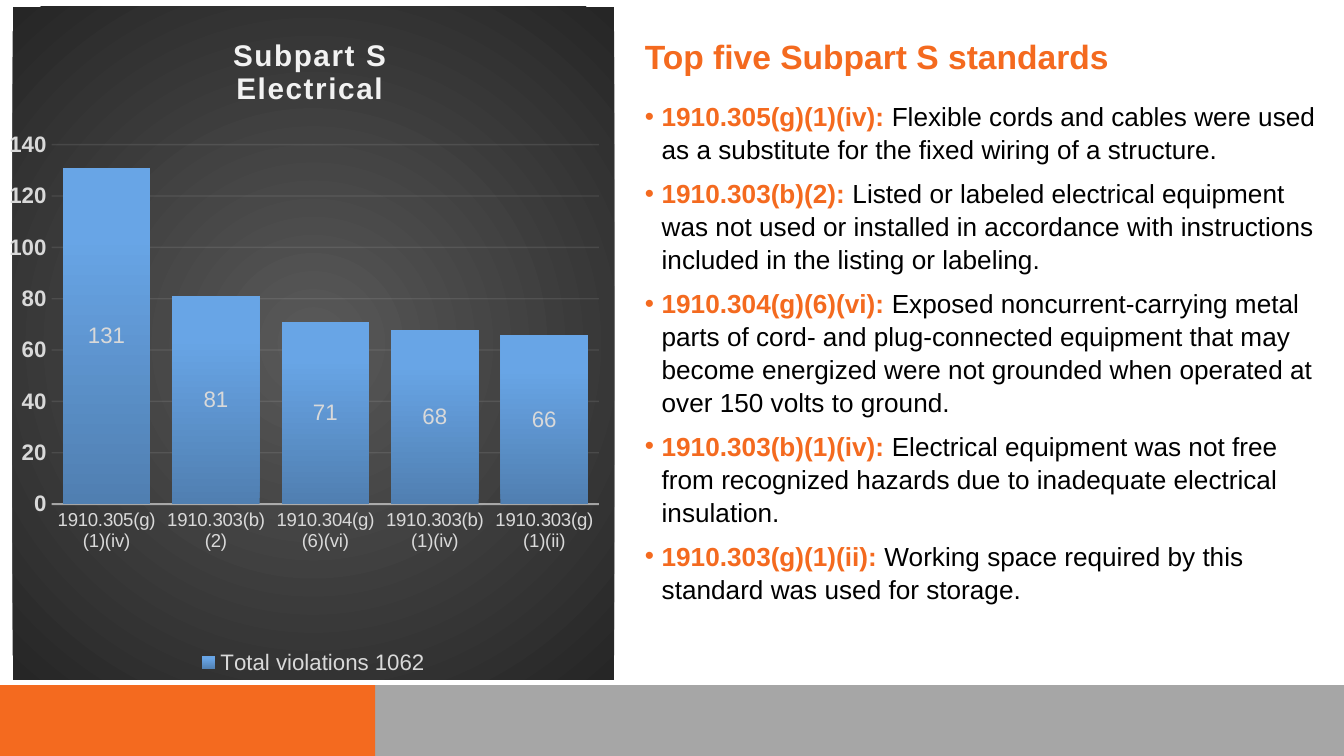
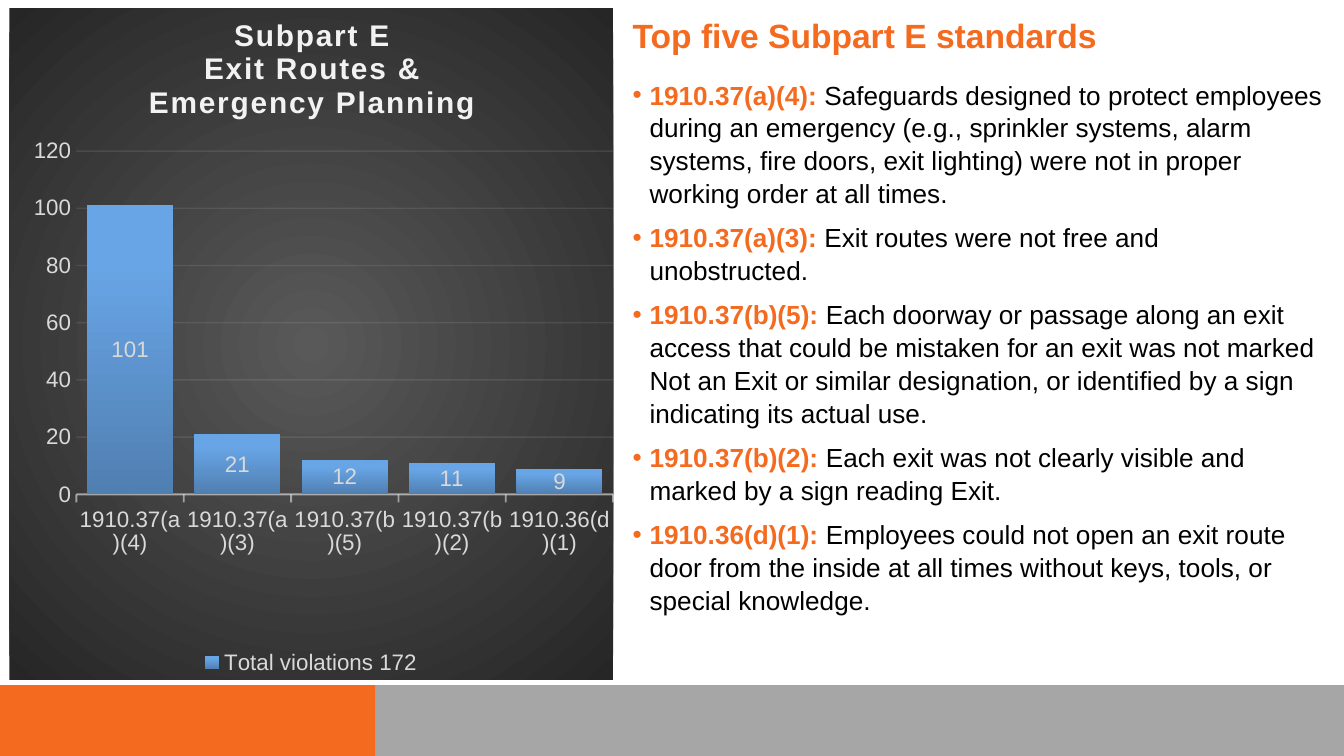
from lxml import etree
from pptx import Presentation
from pptx.chart.data import CategoryChartData
from pptx.dml.color import RGBColor
from pptx.enum.chart import XL_CHART_TYPE, XL_LEGEND_POSITION, XL_TICK_MARK
from pptx.enum.shapes import MSO_SHAPE
from pptx.enum.text import MSO_AUTO_SIZE, PP_ALIGN
from pptx.oxml import parse_xml
from pptx.oxml.ns import nsdecls, qn
from pptx.util import Pt

ORANGE = RGBColor(0xF4, 0x6A, 0x1F)
GREY = RGBColor(0xA6, 0xA6, 0xA6)
BLACK = RGBColor(0, 0, 0)
PALE = RGBColor(0xF2, 0xF2, 0xF2)
LABEL = RGBColor(0xD9, 0xD9, 0xD9)
PANEL_IN = RGBColor(0x59, 0x59, 0x59)
PANEL_OUT = RGBColor(0x26, 0x26, 0x26)
BAR_LOW = RGBColor(0x50, 0x7F, 0xB1)
BAR_MID = RGBColor(0x68, 0xA5, 0xE6)
BAR_TOP = RGBColor(0x66, 0xA6, 0xE9)

W, H = 720, 405
BAND_TOP, BAND_SPLIT = 367, 201

# Text formats
BASE = dict(name="Arial", bold=False)
HEADING = dict(BASE, size=Pt(18), bold=True, color=ORANGE)
CODE = dict(BASE, size=Pt(14), bold=True, color=ORANGE)
BODY = dict(BASE, size=Pt(14), color=BLACK)
CHART_TITLE = dict(BASE, size=Pt(16), bold=True, color=PALE)
CHART_TEXT = dict(BASE, size=Pt(12), color=LABEL)

# Gradient directions
RADIAL = ('<a:path path="circle"><a:fillToRect l="50000" t="50000" '
          'r="50000" b="50000"/></a:path>')
UPWARD = '<a:lin ang="16200000" scaled="0"/>'


def set_font(font, fmt):
    for key, value in fmt.items():
        if key == "color":
            font.color.rgb = value
        else:
            setattr(font, key, value)


def add_run(p, text, fmt, spacing=None):
    r = p.add_run()
    r.text = text
    set_font(r.font, fmt)
    if spacing:
        r._r.get_or_add_rPr().set("spc", str(spacing))


def gradient(stops, direction):
    gs = "".join(f'<a:gs pos="{pos * 1000}"><a:srgbClr val="{color}"/></a:gs>'
                 for pos, color in stops)
    return parse_xml(f'<c:spPr {nsdecls("c", "a")}><a:gradFill rotWithShape="1">'
                     f'<a:gsLst>{gs}</a:gsLst>{direction}</a:gradFill>'
                     '<a:ln><a:noFill/></a:ln></c:spPr>')


def set_layout(parent, **values):
    """Give a chart part a manual layout, as fractions of the chart."""
    old = parent.find(qn("c:layout"))
    if old is not None:
        parent.remove(old)
    layout = etree.Element(qn("c:layout"))
    manual = etree.SubElement(layout, qn("c:manualLayout"))
    for key, value in values.items():
        etree.SubElement(manual, qn(f"c:{key}")).set("val", str(value))
    tx = parent.find(qn("c:tx"))
    parent.insert(0 if tx is None else 1, layout)


def set_line(line, width, alpha, colors):
    line.color.rgb = PALE
    line.width = Pt(width)
    for color in colors():
        etree.SubElement(color, qn("a:alpha")).set("val", str(alpha * 1000))


def footer_bands(s):
    for x, w, color in ((BAND_SPLIT - 1, W - BAND_SPLIT + 1, GREY),
                        (0, BAND_SPLIT, ORANGE)):
        sp = s.shapes.add_shape(MSO_SHAPE.RECTANGLE, Pt(x), Pt(BAND_TOP),
                                Pt(w), Pt(H - BAND_TOP))
        sp.shadow.inherit = False
        sp.fill.solid()
        sp.fill.fore_color.rgb = color
        sp.line.fill.background()


def violations_chart(s, box, spec):
    data = CategoryChartData()
    data.categories = [code for code, _ in spec["bars"]]
    data.add_series(spec["total"], [value for _, value in spec["bars"]])
    chart = s.shapes.add_chart(XL_CHART_TYPE.COLUMN_STACKED,
                               *map(Pt, box), data).chart
    root = chart.element
    set_font(chart.font, dict(BASE, size=Pt(10), color=BLACK))

    # Dark panel and plot area
    root.find(qn("c:chart")).addnext(
        gradient([(0, PANEL_IN), (100, PANEL_OUT)], RADIAL))
    x, y, w, h = spec["plot"]
    set_layout(root.find(".//" + qn("c:plotArea")), layoutTarget="inner",
               xMode="edge", yMode="edge", x=x, y=y, w=w, h=h)

    # Title inside the chart
    chart.has_title = "chart_title" in spec
    if chart.has_title:
        tf = chart.chart_title.text_frame
        for i, line in enumerate(spec["chart_title"]):
            p = tf.add_paragraph() if i else tf.paragraphs[0]
            add_run(p, line, CHART_TITLE, 100)
        set_layout(root.find(".//" + qn("c:title")), xMode="edge",
                   yMode="edge", x=0.36, y=0.04)

    # Bars and their values
    plot = chart.plots[0]
    for key, value in dict(gap_width=25, overlap=100, vary_by_categories=False,
                           has_data_labels=True).items():
        setattr(plot, key, value)
    plot.data_labels.show_value = True
    set_font(plot.data_labels.font, CHART_TEXT)
    root.find(".//" + qn("c:ser")).find(qn("c:tx")).addnext(
        gradient([(0, BAR_LOW), (80, BAR_MID), (100, BAR_TOP)], UPWARD))

    # Axes
    cat, val = chart.category_axis, chart.value_axis
    for axis, fmt in ((cat, spec["cat_font"]), (val, spec["val_font"])):
        axis.minor_tick_mark = XL_TICK_MARK.NONE
        set_font(axis.tick_labels.font, dict(CHART_TEXT, **fmt))
    cat.major_tick_mark = spec["cat_tick"]
    for key, value in dict(major_tick_mark=XL_TICK_MARK.NONE, minimum_scale=0,
                           maximum_scale=spec["top"], major_unit=20,
                           has_major_gridlines=True).items():
        setattr(val, key, value)
    val.format.line.fill.background()
    for line, width, alpha, part in (
            (cat.format.line, 1, 54, "c:catAx/c:spPr"),
            (val.major_gridlines.format.line, 0.75, 10, "c:majorGridlines")):
        set_line(line, width, alpha,
                 lambda: root.xpath(f".//{part}//a:srgbClr"))

    # Legend
    chart.has_legend = True
    chart.legend.position = XL_LEGEND_POSITION.BOTTOM
    chart.legend.include_in_layout = False
    set_font(chart.legend.font, CHART_TEXT)


def text_box(s, box):
    tf = s.shapes.add_textbox(*map(Pt, box)).text_frame
    tf.word_wrap = True
    tf.auto_size = MSO_AUTO_SIZE.SHAPE_TO_FIT_TEXT
    return tf


def panel_title(s, box, lines):
    tf = text_box(s, box)
    for i, line in enumerate(lines):
        p = tf.add_paragraph() if i else tf.paragraphs[0]
        p.alignment = PP_ALIGN.CENTER
        p.line_spacing = Pt(18)
        add_run(p, line, CHART_TITLE, 100)


def standards_list(s, box, heading, items):
    tf = text_box(s, box)
    p = tf.paragraphs[0]
    p.space_after = Pt(12)
    add_run(p, heading, HEADING)
    for code, text in items:
        p = tf.add_paragraph()
        pPr = p._p.get_or_add_pPr()
        pPr.set("marL", str(Pt(9)))
        pPr.set("indent", str(-Pt(9)))
        etree.SubElement(pPr, qn("a:buFont")).set("typeface", "Arial")
        etree.SubElement(pPr, qn("a:buChar")).set("char", "•")
        p.line_spacing = 1.05
        p.space_after = Pt(6)
        add_run(p, f"{code}: ", CODE)
        add_run(p, text, BODY)


ELECTRICAL = dict(
    chart_box=(5, 3.6, 324, 360.7),
    chart_title=["Subpart S", "Electrical"],
    total="Total violations 1062",
    bars=[("1910.305(g)(1)(iv)", 131), ("1910.303(b)(2)", 81),
          ("1910.304(g)(6)(vi)", 71), ("1910.303(b)(1)(iv)", 68),
          ("1910.303(g)(1)(ii)", 66)],
    plot=(0.065, 0.205, 0.91, 0.534), top=140,
    cat_font=dict(size=Pt(10)), val_font=dict(bold=True),
    cat_tick=XL_TICK_MARK.NONE,
    list_box=(338.4, 15.8, 376.6, 326),
    heading="Top five Subpart S standards",
    texts=[
        "Flexible cords and cables were used as a substitute for the fixed "
        "wiring of a structure.",
        "Listed or labeled electrical equipment was not used or installed in "
        "accordance with instructions included in the listing or labeling.",
        "Exposed noncurrent-carrying metal parts of cord- and plug-connected "
        "equipment that may become energized were not grounded when operated "
        "at over 150 volts to ground.",
        "Electrical equipment was not free from recognized hazards due to "
        "inadequate electrical insulation.",
        "Working space required by this standard was used for storage."])

EXIT_ROUTES = dict(
    chart_box=(5, 4.3, 324, 360),
    total="Total violations 172",
    bars=[("1910.37(a)(4)", 101), ("1910.37(a)(3)", 21), ("1910.37(b)(5)", 12),
          ("1910.37(b)(2)", 11), ("1910.36(d)(1)", 9)],
    plot=(0.111, 0.213, 0.889, 0.511), top=120,
    cat_font={}, val_font={}, cat_tick=XL_TICK_MARK.OUTSIDE,
    panel_box=(5.8, 6.5, 322.6, 62),
    panel_title=["Subpart E", "Exit Routes &", "Emergency Planning"],
    list_box=(331.9, 4.3, 383.8, 303),
    heading="Top five Subpart E standards",
    texts=[
        "Safeguards designed to protect employees during an emergency (e.g., "
        "sprinkler systems, alarm systems, fire doors, exit lighting) were "
        "not in proper working order at all times.",
        "Exit routes were not free and unobstructed.",
        "Each doorway or passage along an exit access that could be mistaken "
        "for an exit was not marked Not an Exit or similar designation, or "
        "identified by a sign indicating its actual use.",
        "Each exit was not clearly visible and marked by a sign reading Exit.",
        "Employees could not open an exit route door from the inside at all "
        "times without keys, tools, or special knowledge."])


def subpart_slide(prs, spec):
    s = prs.slides.add_slide(prs.slide_layouts[6])
    footer_bands(s)
    violations_chart(s, spec["chart_box"], spec)
    codes = [code for code, _ in spec["bars"]]
    standards_list(s, spec["list_box"], spec["heading"],
                   zip(codes, spec["texts"]))
    if "panel_title" in spec:
        panel_title(s, spec["panel_box"], spec["panel_title"])


def main():
    prs = Presentation()
    prs.slide_width, prs.slide_height = Pt(W), Pt(H)
    for spec in (ELECTRICAL, EXIT_ROUTES):
        subpart_slide(prs, spec)
    prs.save("out.pptx")


if __name__ == "__main__":
    main()
